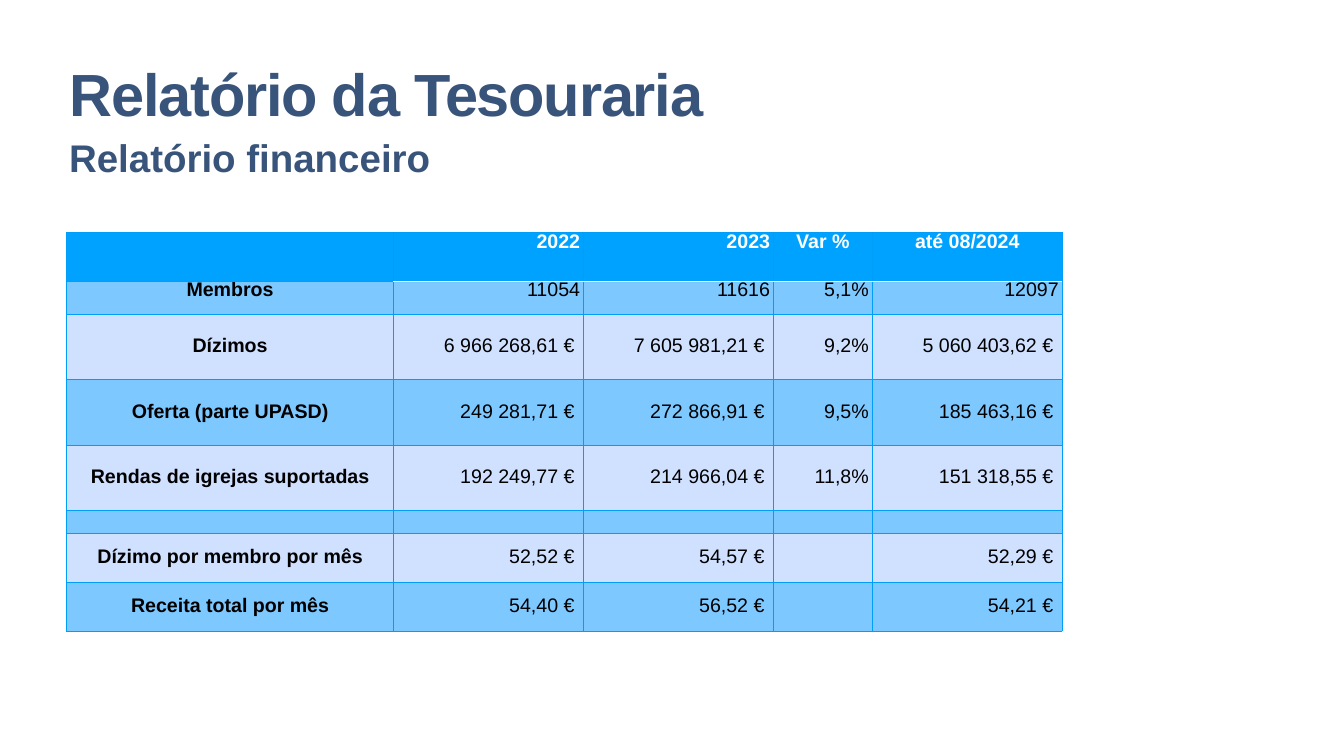
from lxml import etree
from pptx import Presentation
from pptx.dml.color import RGBColor
from pptx.enum import text
from pptx.oxml.ns import qn
from pptx.util import Inches, Pt

FONT = "Arial"
NAVY = RGBColor(0x38, 0x54, 0x7A)
BLUE = RGBColor(0x00, 0xA2, 0xFF)
MID_BLUE = RGBColor(0x7D, 0xC8, 0xFF)
PALE_BLUE = RGBColor(0xD0, 0xE1, 0xFF)
LINE_BLUE = RGBColor(0x00, 0x9E, 0xF9)
WHITE = RGBColor(0xFF, 0xFF, 0xFF)
BLACK = RGBColor(0x00, 0x00, 0x00)

LEFT = 1.32
COLUMN_WIDTHS = [6.49, 3.77, 3.77, 1.96, 3.77]
ROW_HEIGHTS = [0.97, 0.65, 1.3, 1.3, 1.3, 0.45, 0.97, 0.97]
ROWS = [
    ["", "2022", "2023", "Var %", "até 08/2024"],
    ["Membros", "11054", "11616", "5,1%", "12097"],
    ["Dízimos", "6 966 268,61 €", "7 605 981,21 €", "9,2%", "5 060 403,62 €"],
    ["Oferta (parte UPASD)", "249 281,71 €", "272 866,91 €", "9,5%", "185 463,16 €"],
    ["Rendas de igrejas suportadas", "192 249,77 €", "214 966,04 €", "11,8%", "151 318,55 €"],
    [""] * 5,
    ["Dízimo por membro por mês", "52,52 €", "54,57 €", "", "52,29 €"],
    ["Receita total por mês", "54,40 €", "56,52 €", "", "54,21 €"],
]


def style_run(r, size, color, bold):
    r.font.name = FONT
    r.font.size = Pt(size)
    r.font.color.rgb = color
    r.font.bold = bold


def add_heading(slide, wording, top, height, inset, size, line_spacing=1.0, tracking=0):
    box = slide.shapes.add_textbox(Inches(LEFT), Inches(top), Inches(19.78), Inches(height))
    tf = box.text_frame
    tf.word_wrap = True
    tf.vertical_anchor = text.MSO_ANCHOR.MIDDLE
    tf.margin_left = tf.margin_right = tf.margin_top = tf.margin_bottom = Inches(inset)
    tf.text = wording
    p = tf.paragraphs[0]
    p.line_spacing = line_spacing
    r = p.runs[0]
    style_run(r, size, NAVY, True)
    if tracking:
        r.font._element.set("spc", str(round(tracking * 100)))


def add_border(cell, side, color, width):
    ln = etree.SubElement(cell._tc.get_or_add_tcPr(), qn(f"a:ln{side}"), w=str(Pt(width)))
    fill = etree.SubElement(ln, qn("a:solidFill"))
    etree.SubElement(fill, qn("a:srgbClr"), val=str(color))


def format_cell(cell, row, col):
    # Borders come before the fill; a white rule runs under the year headings
    for side in "LRTB":
        under_heading = col > 0 and (row, side) in ((0, "B"), (1, "T"))
        add_border(cell, side, *((WHITE, 2) if under_heading else (LINE_BLUE, 0.75)))
    cell.fill.solid()
    cell.fill.fore_color.rgb = BLUE if row == 0 else MID_BLUE if row % 2 else PALE_BLUE

    wording = ROWS[row][col]
    cell.text = wording
    cell.vertical_anchor = text.MSO_ANCHOR.TOP if row < 2 else text.MSO_ANCHOR.MIDDLE
    cell.margin_top = cell.margin_bottom = 0
    cell.margin_left = Inches(0.07)
    cell.margin_right = Inches(0.18 if wording.endswith("€") else 0.07)

    p = cell.text_frame.paragraphs[0]
    centred = col == 0 or (row == 0 and col > 2)
    p.alignment = text.PP_ALIGN.CENTER if centred else text.PP_ALIGN.RIGHT
    p.line_spacing = 0.9
    for r in p.runs:
        style_run(r, 28, WHITE if row == 0 else BLACK, row == 0 or col == 0)


def add_finance_table(slide):
    frame = slide.shapes.add_table(
        len(ROWS), len(COLUMN_WIDTHS), Inches(LEFT), Inches(4.61),
        Inches(sum(COLUMN_WIDTHS)), Inches(sum(ROW_HEIGHTS)))
    table = frame.table
    for column, width in zip(table.columns, COLUMN_WIDTHS):
        column.width = Inches(width)
    for row, height in enumerate(ROW_HEIGHTS):
        table.rows[row].height = Inches(height)
        for col in range(len(COLUMN_WIDTHS)):
            format_cell(table.cell(row, col), row, col)


def main():
    prs = Presentation()
    prs.slide_width, prs.slide_height = Inches(26.67), Inches(15)
    slide = prs.slides.add_slide(prs.slide_layouts[6])

    # Title and subtitle
    add_heading(slide, "Relatório da Tesouraria", 1.18, 1.57, 0.06, 85, 0.8, -1.7)
    add_heading(slide, "Relatório financeiro", 2.6, 1.02, 0.05, 55)

    # Financial figures
    add_finance_table(slide)
    prs.save("out.pptx")


if __name__ == "__main__":
    main()
